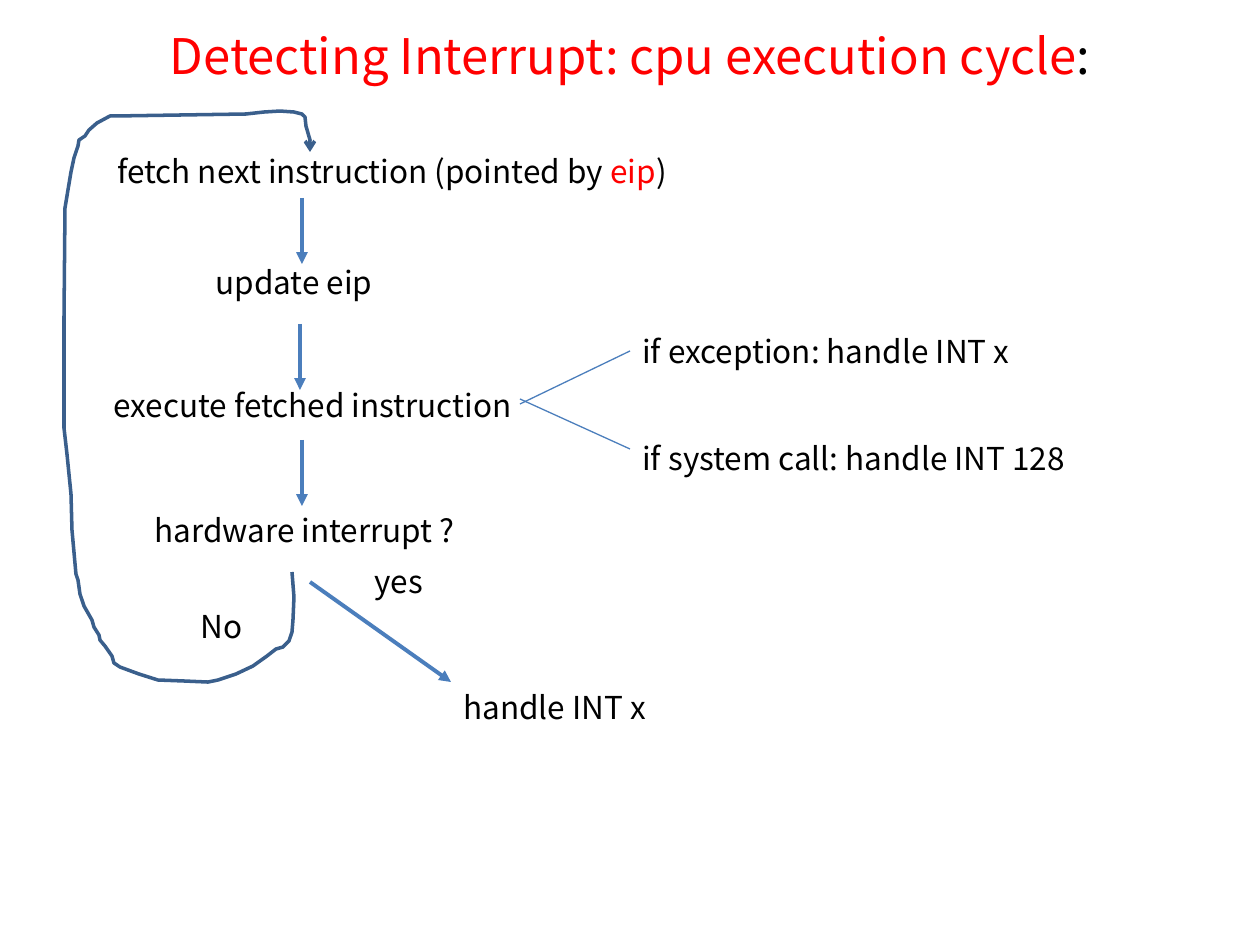
from lxml import etree
from pptx import Presentation
from pptx.dml.color import RGBColor
from pptx.enum.shapes import MSO_CONNECTOR
from pptx.enum.text import MSO_ANCHOR, PP_ALIGN
from pptx.oxml.ns import qn
from pptx.util import Pt

STRAIGHT = MSO_CONNECTOR.STRAIGHT
TOP, MIDDLE = MSO_ANCHOR.TOP, MSO_ANCHOR.MIDDLE
LEFT, CENTER = PP_ALIGN.LEFT, PP_ALIGN.CENTER

EMU_PER_PX = 914400 / 126
FONT = "Noto Sans CJK KR"
COLORS = {"text": "000000", "accent": "FF0000", "arrow": "4B7EBC", "loop": "3A5F8C"}
TEXT_HEIGHT = 50

# Return path, from below the hardware check round to the first step
LOOP_POINTS = [
    (228, 0), (230, 25), (229, 48), (228, 60), (225, 69), (219, 75), (212, 77),
    (203, 84), (189, 94), (172, 102), (154, 108), (144, 110), (120, 109),
    (94, 108), (75, 102), (56, 95), (50, 91), (48, 84), (41, 74), (36, 68),
    (35, 63), (30, 55), (28, 48), (20, 34), (16, 22), (14, 8), (12, 2),
    (8, -42), (7, -78), (3, -118), (0, -144), (0, -254), (1, -364),
    (4, -382), (7, -400), (10, -414), (14, -426), (15, -432), (21, -436),
    (25, -442), (33, -449), (46, -456), (52, -456), (182, -458), (200, -460),
    (216, -461), (230, -460), (238, -458), (241, -455), (242, -446),
    (246, -432), (246, -420),
]


def px(length):
    return round(length * EMU_PER_PX)


def color(name):
    return RGBColor.from_string(COLORS[name])


def add_text(slide, text, box, size=18, align=LEFT, anchor=TOP):
    """Add one line of text, given as a string or as (text, colour name) pairs."""
    frame = slide.shapes.add_textbox(*map(px, box)).text_frame
    frame.word_wrap = True
    frame.vertical_anchor = anchor
    paragraph = frame.paragraphs[0]
    paragraph.alignment = align
    for part, color_name in [(text, "text")] if isinstance(text, str) else text:
        run = paragraph.add_run()
        run.text = part
        run.font.name = FONT
        run.font.size = Pt(size)
        run.font.color.rgb = color(color_name)
        etree.SubElement(run.font._element, qn("a:ea"), typeface=FONT)


def style_line(shape, color_name, width, head=None):
    shape.line.color.rgb = color(color_name)
    shape.line.width = Pt(width)
    if head:
        etree.SubElement(shape.line._get_or_add_ln(), qn("a:tailEnd"), type=head)


def add_line(slide, start, end, width=2.25, head="triangle"):
    line = slide.shapes.add_connector(STRAIGHT, *map(px, (*start, *end)))
    style_line(line, "arrow", width, head)
    etree.SubElement(line._element.spPr, qn("a:effectLst"))


def add_title(slide, box):
    title = [("Detecting Interrupt: cpu execution cycle", "accent"), (":", "text")]
    add_text(slide, title, box, size=28, align=CENTER, anchor=MIDDLE)


def add_steps(slide, left, top):
    """Stack the four steps of the cycle with an arrow between neighbours."""
    fetch = [("fetch next instruction (pointed by ", "text"), ("eip", "accent"), (")", "text")]
    steps = [
        (fetch, 4, 0, 586),
        ("update eip", 102, 111, 198),
        ("execute fetched instruction", 0, 234, 586),
        ("hardware interrupt ?", 41, 359, 485),
    ]
    for text, x, y, width in steps:
        add_text(slide, text, (left + x, top + y, width, TEXT_HEIGHT))
    for x, y in [(201, 52), (199, 178), (201, 294)]:
        add_line(slide, (left + x, top + y), (left + x, top + y + 66))


def add_exceptions(slide, left, top):
    """Fan out from the execute step to the two software interrupts."""
    cases = [
        ("if exception: handle INT x", 0, 427, 78, 25),
        ("if system call: handle INT 128", 107, 466, 73, 123),
    ]
    for text, y, width, start, end in cases:
        add_text(slide, text, (left + 110, top + y, width, TEXT_HEIGHT))
        add_line(slide, (left, top + start), (left + 110, top + end), width=0.75, head=None)


def add_loop(slide, left, top):
    """Draw the No path, whose first point lies at the height of top."""
    points = [(left + x, top + y) for x, y in LOOP_POINTS]
    builder = slide.shapes.build_freeform(*points[0], scale=EMU_PER_PX)
    builder.add_line_segments(points[1:], close=False)
    loop = builder.convert_to_shape()
    loop.shadow.inherit = False
    loop.fill.background()
    style_line(loop, "loop", 2, "arrow")
    add_text(slide, "No", (left + 124, top + 29, 74, TEXT_HEIGHT))


def add_interrupt_handler(slide, left, top):
    add_line(slide, (left, top), (left + 141, top + 100))
    add_text(slide, "yes", (left + 52, top - 26, 95, TEXT_HEIGHT))
    add_text(slide, "handle INT x", (left + 141, top + 100, 277, TEXT_HEIGHT))


def main():
    presentation = Presentation()
    presentation.slide_width = px(1260)
    presentation.slide_height = px(945)
    slide = presentation.slides.add_slide(presentation.slide_layouts[6])
    add_title(slide, (63, 14, 1134, 82))
    add_steps(slide, 101, 146)
    add_exceptions(slide, 520, 326)
    add_loop(slide, 64, 572)
    add_interrupt_handler(slide, 310, 582)
    presentation.save("out.pptx")


if __name__ == "__main__":
    main()
